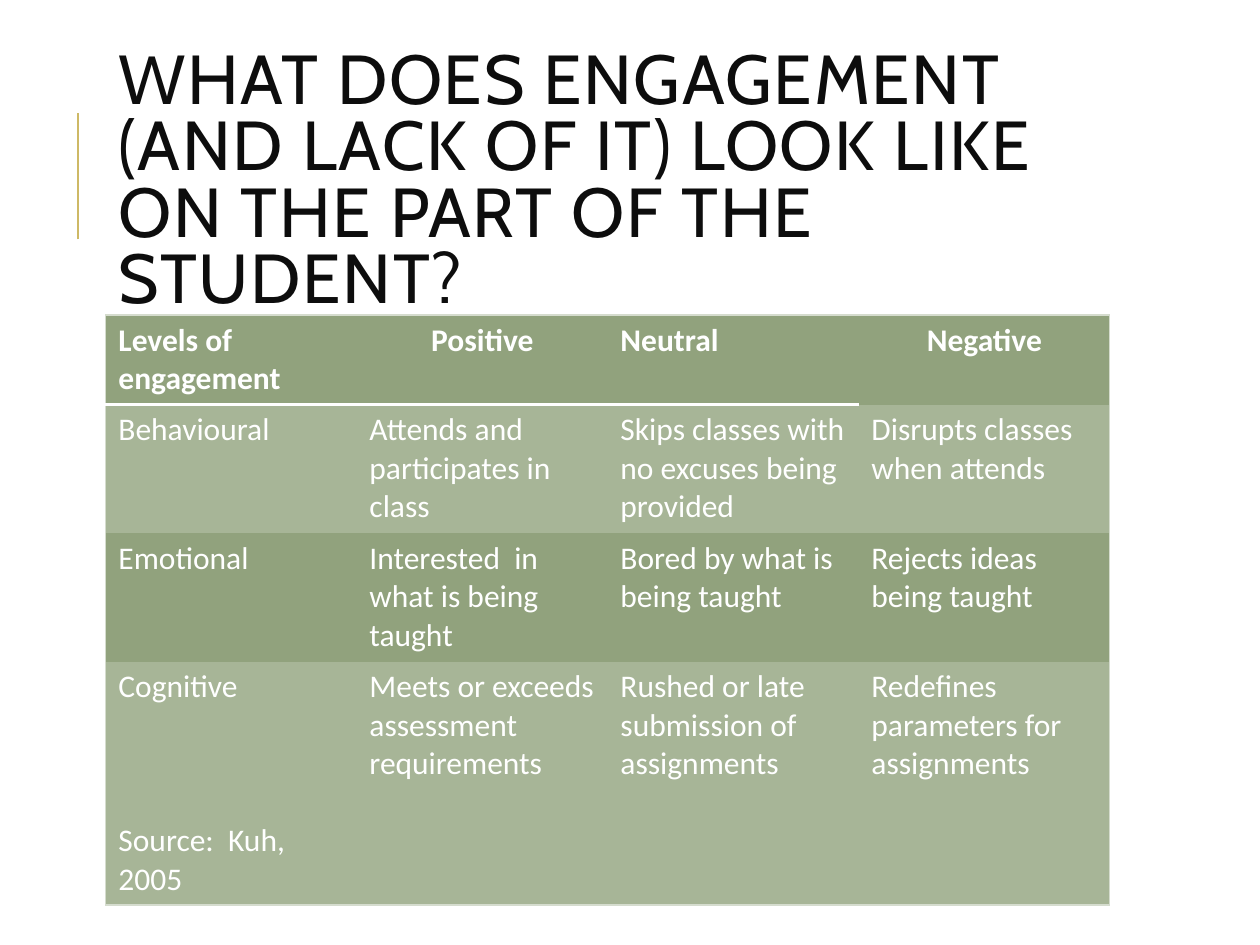
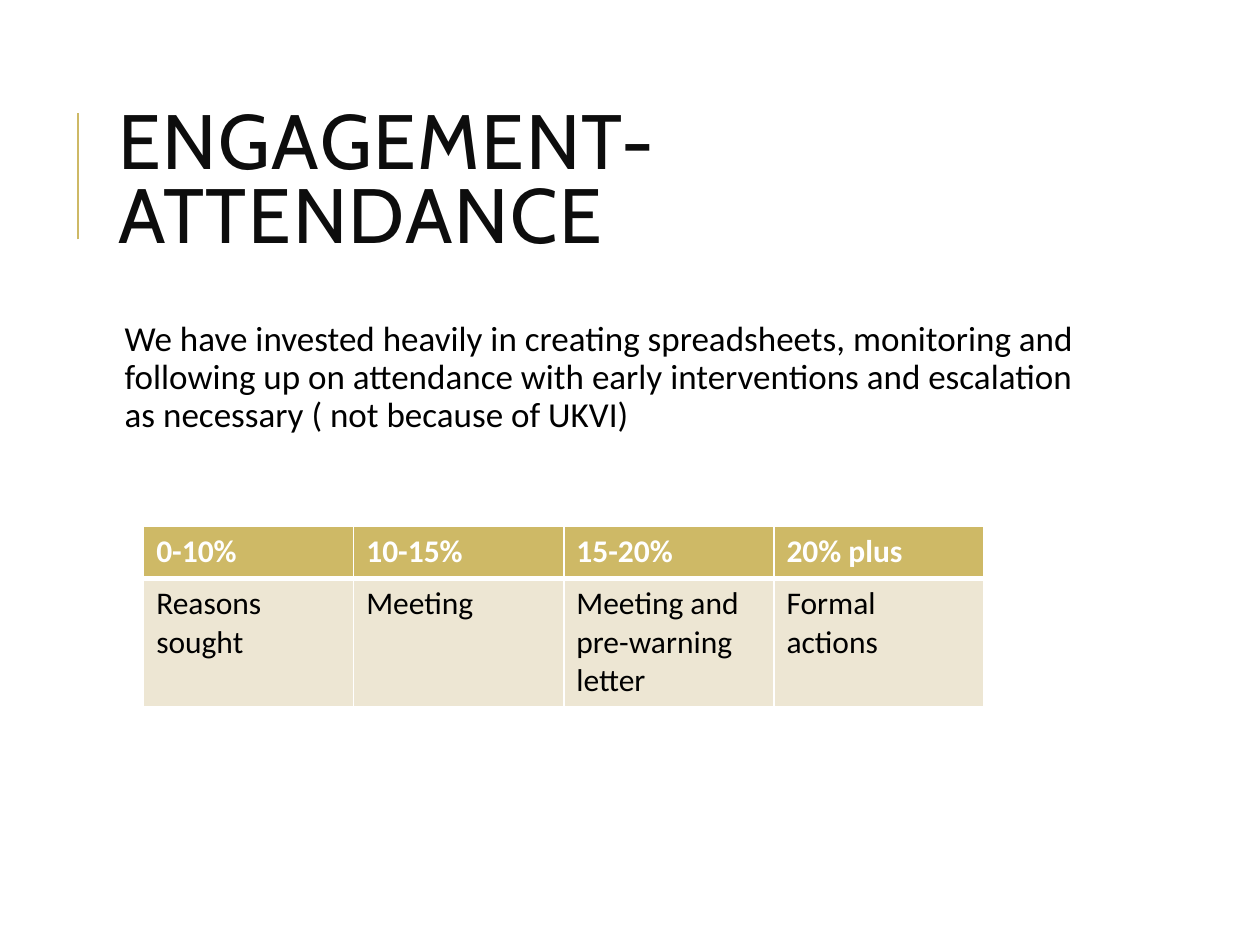
from dataclasses import dataclass
from typing import Any, Optional

import pptx
import pptx.dml.color
import pptx.enum.shapes
import pptx.enum.text
import pptx.oxml.ns
import pptx.util
from lxml import etree

RGB = pptx.dml.color.RGBColor
Align = pptx.enum.text.PP_ALIGN
Pt = pptx.util.Pt
qn = pptx.oxml.ns.qn

GOLD = RGB(0xCE, 0xB9, 0x66)
SAND = RGB(0xED, 0xE6, 0xD3)
MOSS = RGB(0x91, 0xA2, 0x7D)
SAGE = RGB(0xA7, 0xB5, 0x97)
MIST = RGB(0xD5, 0xDC, 0xCE)
INK = RGB(0x0D, 0x0D, 0x0D)
BLACK = RGB(0, 0, 0)
WHITE = RGB(0xFF, 0xFF, 0xFF)

WIDE, HIGH = pptx.util.Inches(10), pptx.util.Inches(7.5)
COLS, ROWS = 100, 75
LEFT, SPAN = 8.4, 79.7
MARK = 6.2

TITLE = {"name": "Cabin", "color": INK}
BODY = {"name": "Calibri", "size": Pt(20), "color": BLACK}
CELL = {"name": "Calibri", "size": Pt(18), "bold": False}
HEAD = {**CELL, "bold": True, "color": WHITE}
FRAME = {"word_wrap": True, "auto_size": pptx.enum.text.MSO_AUTO_SIZE.NONE}


@dataclass(frozen=True)
class Box:
    left: float
    top: float
    width: float
    height: float

    def place(self) -> tuple[int, int, int, int]:
        return across(self.left), down(self.top), across(self.width), down(self.height)


@dataclass(frozen=True)
class Edge:
    color: RGB
    width: float


@dataclass(frozen=True)
class Chart:
    left: float
    top: float
    width: float
    rows: list[float]
    cells: list[list[str]]
    fills: list[RGB]
    ink: RGB
    rule: Edge
    ruled: int
    outer: Edge
    inner: Optional[Edge] = None
    mid: tuple[int, ...] = ()
    gap: float = 0


LEVELS = Chart(
    LEFT, 25, SPAN, [7.1, 10.2, 10.2, 19.2],
    [
        ["Levels of engagement", "Positive", "Neutral", "Negative"],
        ["Behavioural", "Attends and participates in class",
         "Skips classes with no excuses being provided",
         "Disrupts classes when attends"],
        ["Emotional", "Interested  in what is being taught",
         "Bored by what is being taught", "Rejects ideas being taught"],
        ["Cognitive\nSource:  Kuh, 2005", "Meets or exceeds assessment requirements",
         "Rushed or late submission of assignments",
         "Redefines parameters for assignments"],
    ],
    [MOSS, SAGE, MOSS, SAGE], WHITE, Edge(WHITE, 1.5), 3, Edge(MIST, 0.75),
    mid=(1, 3), gap=66,
)

STEPS = Chart(
    11.4, 41.8, 66.7, [4.1, 10.1],
    [
        ["0-10%", "10-15%", "15-20%", "20% plus"],
        ["Reasons sought", "Meeting", "Meeting and pre-warning letter", "Formal actions"],
    ],
    [GOLD, SAND], BLACK, Edge(WHITE, 3), 4, Edge(WHITE, 1), Edge(WHITE, 1),
)


def across(cols: float) -> int:
    return round(WIDE * cols / COLS)


def down(rows: float) -> int:
    return round(HIGH * rows / ROWS)


def assign(thing: Any, form: dict[str, Any]) -> None:
    for name, value in form.items():
        if name == "color":
            thing.color.rgb = value
        else:
            setattr(thing, name, value)


def write(slide: Any, box: Box, text: str, font: dict[str, Any],
          frame: dict[str, Any], space: float) -> Any:
    body = slide.shapes.add_textbox(*box.place()).text_frame
    assign(body, {**FRAME, **frame})
    para = body.paragraphs[0]
    para.line_spacing = space
    run = para.add_run()
    run.text = text
    assign(run.font, font)
    return run


def start(deck: Any, text: str, size: float) -> Any:
    slide = deck.slides.add_slide(deck.slide_layouts[6])
    bar = slide.shapes.add_connector(
        pptx.enum.shapes.MSO_CONNECTOR.STRAIGHT,
        across(MARK), down(19), across(MARK), down(9))
    assign(bar.line, {"width": Pt(1.5)})
    bar.line.color.rgb = GOLD
    etree.SubElement(bar._element.spPr, qn("a:effectLst"))
    run = write(slide, Box(LEFT, 6.4, SPAN, 16.4), text, {**TITLE, "size": Pt(size)},
                {"vertical_anchor": pptx.enum.text.MSO_ANCHOR.MIDDLE}, 0.8)
    run._r.get_or_add_rPr().set("spc", "100")
    return slide


def border(cell: Any, edges: dict[str, Optional[Edge]]) -> None:
    props = cell._tc.get_or_add_tcPr()
    for place, (side, edge) in enumerate(edges.items()):
        line = etree.Element(qn(f"a:ln{side}"))
        if edge is None:
            line.set("w", "0")
            etree.SubElement(line, qn("a:noFill"))
        else:
            line.set("w", str(Pt(edge.width)))
            fill = etree.SubElement(line, qn("a:solidFill"))
            etree.SubElement(fill, qn("a:srgbClr")).set("val", str(edge.color))
        props.insert(place, line)


def draw(slide: Any, chart: Chart) -> None:
    count, wide = len(chart.cells), len(chart.cells[0])
    box = Box(chart.left, chart.top, chart.width, sum(chart.rows))
    table = slide.shapes.add_table(count, wide, *box.place()).table
    assign(table, {"first_row": False, "horz_banding": False})
    for col in table.columns:
        col.width = across(chart.width / wide)
    for row, texts in enumerate(chart.cells):
        table.rows[row].height = down(chart.rows[row])
        for col, text in enumerate(texts):
            cell = table.cell(row, col)
            cell.fill.solid()
            cell.fill.fore_color.rgb = chart.fills[row]
            cell.text = text
            for place, para in enumerate(cell.text_frame.paragraphs):
                assign(para.runs[0].font, HEAD if row == 0 else {**CELL, "color": chart.ink})
                if place:
                    para.space_before = Pt(chart.gap)
                if row == 0 and col in chart.mid:
                    para.alignment = Align.CENTER
            rule = chart.rule if col < chart.ruled else None
            border(cell, {
                "L": chart.inner if col else chart.outer,
                "R": chart.inner if col < wide - 1 else chart.outer,
                "T": {0: chart.outer, 1: rule}.get(row, chart.inner),
                "B": {0: rule, count - 1: chart.outer}.get(row, chart.inner),
            })


def main() -> None:
    deck = pptx.Presentation()
    assign(deck, {"slide_width": WIDE, "slide_height": HIGH})
    draw(start(deck, "WHAT DOES ENGAGEMENT (AND LACK OF IT) LOOK LIKE "
                     "ON THE PART OF THE STUDENT?", 39.6), LEVELS)
    slide = start(deck, "ENGAGEMENT- ATTENDANCE", 44)
    pads = {"margin_left": across(1.5), "margin_right": across(0.5),
            "margin_top": down(0.5), "margin_bottom": down(0.5)}
    write(slide, Box(LEFT, 25, SPAN, 44),
          "We have invested heavily in creating spreadsheets, monitoring and following up "
          "on attendance with early interventions and escalation as necessary "
          "( not because of UKVI)", BODY, pads, 0.9)
    draw(slide, STEPS)
    deck.save("out.pptx")


if __name__ == "__main__":
    main()
